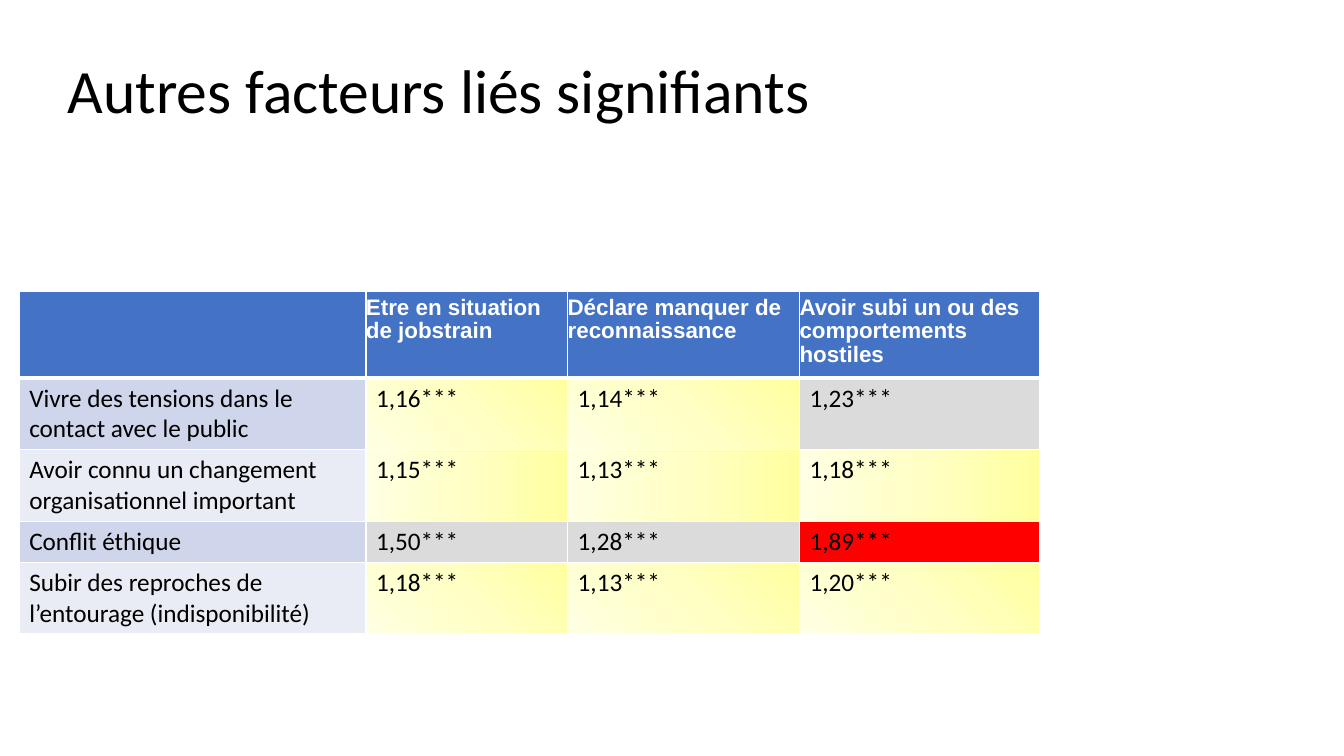
from lxml import etree
from pptx import Presentation
from pptx.dml.color import RGBColor
from pptx.enum.text import MSO_ANCHOR, MSO_AUTO_SIZE, PP_ALIGN
from pptx.oxml.ns import qn
from pptx.util import Inches, Pt

LEFT = PP_ALIGN.LEFT
MIDDLE = MSO_ANCHOR.MIDDLE
GROW = MSO_AUTO_SIZE.SHAPE_TO_FIT_TEXT
TITLE_ONLY = 5

WHITE, BLACK, BLUE = "FFFFFF", "000000", "4472C4"
GREY, RED = "DBDBDB", "FF0000"
LABEL_FILLS = ["CFD5EA", "E9EBF5"]
YELLOW_STOPS = [(0, "FFFFA0"), (50, "FFFFC5"), (100, "FFFFE3")]
DIAGONAL, HORIZONTAL, RADIAL = "diagonal", "horizontal", "radial"
GRADIENT_ANGLES = {DIAGONAL: 135, HORIZONTAL: 180}

COLUMN_WIDTHS = [3.44, 2, 2.3, 2.38]
ROW_HEIGHTS = [0.84, 0.71, 0.71, 0.41, 0.71]
HEADERS = [
    "",
    "Etre en situation de jobstrain",
    "Déclare manquer de reconnaissance",
    "Avoir subi un ou des comportements hostiles",
]
FACTORS = [
    ("Vivre des tensions dans le contact avec le public",
     ["1,16***", "1,14***", "1,23***"], [DIAGONAL, DIAGONAL, GREY]),
    ("Avoir connu un changement organisationnel important",
     ["1,15***", "1,13***", "1,18***"], [HORIZONTAL] * 3),
    ("Conflit éthique",
     ["1,50***", "1,28***", "1,89***"], [GREY, GREY, RED]),
    ("Subir des reproches de l’entourage (indisponibilité)",
     ["1,18***", "1,13***", "1,20***"], [RADIAL] * 3),
]


def color(value):
    return RGBColor.from_string(value)


def add_run(paragraph, text, size, font_name, font_color, bold=False):
    run = paragraph.add_run()
    run.text = text
    run.font.size = Pt(size)
    run.font.name = font_name
    run.font.bold = bold
    run.font.color.rgb = color(font_color)


def add_color_fill(parent, value):
    etree.SubElement(parent, qn("a:srgbClr"), val=value)


def set_borders(cell, bottom_width):
    properties = cell._tc.get_or_add_tcPr()
    for side, width in zip("LRTB", [1, 1, 1, bottom_width]):
        line = etree.SubElement(properties, qn(f"a:ln{side}"), w=str(Pt(width)))
        add_color_fill(etree.SubElement(line, qn("a:solidFill")), WHITE)


def set_gradient(cell, style):
    gradient = etree.SubElement(cell._tc.get_or_add_tcPr(), qn("a:gradFill"))
    stops = etree.SubElement(gradient, qn("a:gsLst"))
    for position, value in YELLOW_STOPS:
        stop = etree.SubElement(stops, qn("a:gs"), pos=str(position * 1000))
        add_color_fill(stop, value)
    if style == RADIAL:
        circle = etree.SubElement(gradient, qn("a:path"), {"path": "circle"})
        etree.SubElement(circle, qn("a:fillToRect"), l="100000", b="100000")
    else:
        angle = str(GRADIENT_ANGLES[style] * 60000)
        etree.SubElement(gradient, qn("a:lin"), ang=angle, scaled="0")


def set_fill(cell, fill):
    if fill in (DIAGONAL, HORIZONTAL, RADIAL):
        set_gradient(cell, fill)
    else:
        cell.fill.solid()
        cell.fill.fore_color.rgb = color(fill)


def fill_header(cell, text):
    set_borders(cell, 3)
    set_fill(cell, BLUE)
    if text:
        cell.margin_left = cell.margin_right = 0
        paragraph = cell.text_frame.paragraphs[0]
        paragraph.line_spacing = 0.95
        add_run(paragraph, text, 16, "Arial", WHITE, bold=True)


def fill_body(cell, text, fill):
    set_borders(cell, 1)
    set_fill(cell, fill)
    add_run(cell.text_frame.paragraphs[0], text, 18, "Calibri", BLACK)


def format_title(title, text):
    title.left, title.top = Inches(0.67), Inches(0.59)
    title.width, title.height = Inches(12), Inches(0.67)
    frame = title.text_frame
    frame.margin_left = frame.margin_right = 0
    frame.margin_top = frame.margin_bottom = 0
    frame.vertical_anchor = MIDDLE
    frame.word_wrap = True
    frame.auto_size = GROW
    paragraph = frame.paragraphs[0]
    paragraph.alignment = LEFT
    paragraph.line_spacing = 0.9
    add_run(paragraph, text, 44, "Calibri", BLACK)


def add_factor_table(slide):
    table = slide.shapes.add_table(
        len(ROW_HEIGHTS), len(COLUMN_WIDTHS), Inches(0.19), Inches(2.89),
        Inches(sum(COLUMN_WIDTHS)), Inches(sum(ROW_HEIGHTS))).table
    for column, width in zip(table.columns, COLUMN_WIDTHS):
        column.width = Inches(width)
    for row, height in zip(table.rows, ROW_HEIGHTS):
        row.height = Inches(height)
    for column_index, header in enumerate(HEADERS):
        fill_header(table.cell(0, column_index), header)
    for index, (label, values, fills) in enumerate(FACTORS):
        texts = [label] + values
        row_fills = [LABEL_FILLS[index % 2]] + fills
        for column_index, (text, fill) in enumerate(zip(texts, row_fills)):
            fill_body(table.cell(index + 1, column_index), text, fill)


def main():
    presentation = Presentation()
    presentation.slide_width = Inches(13.33)
    presentation.slide_height = Inches(7.5)
    slide = presentation.slides.add_slide(presentation.slide_layouts[TITLE_ONLY])
    format_title(slide.shapes.title, "Autres facteurs liés signifiants")
    add_factor_table(slide)
    presentation.save("out.pptx")


if __name__ == "__main__":
    main()
